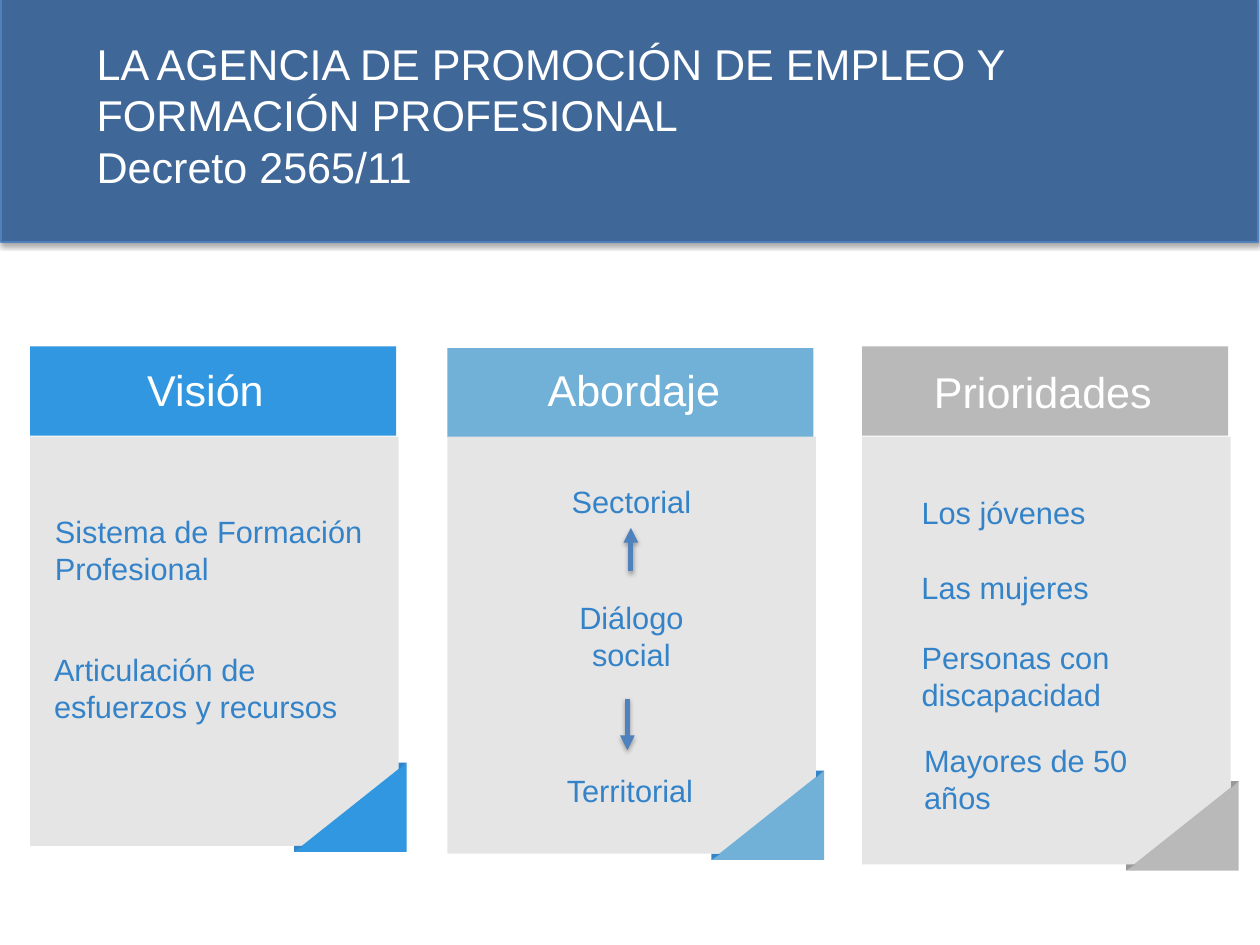
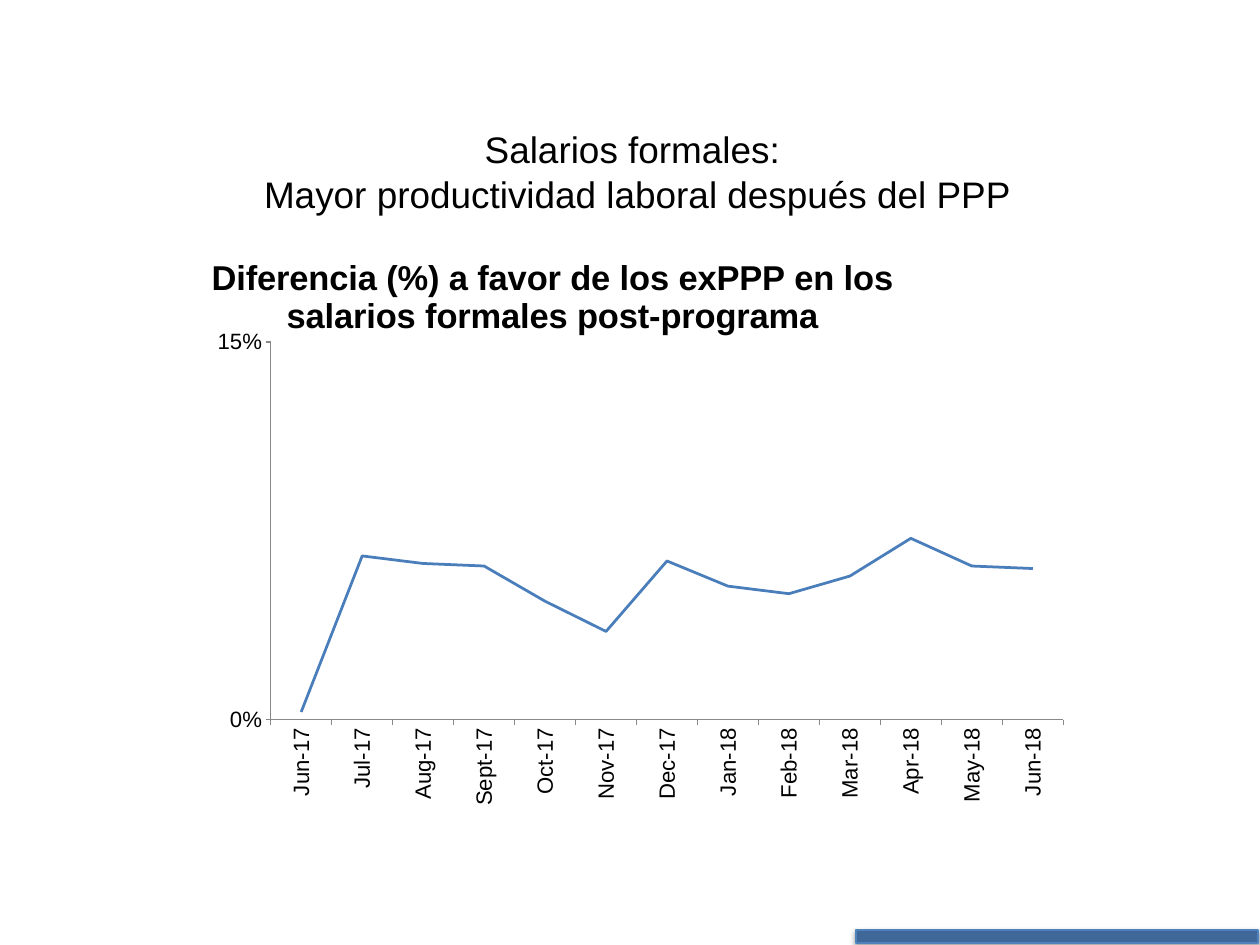
from lxml.etree import SubElement
from pptx import Presentation
from pptx.chart.data import CategoryChartData
from pptx.dml.color import RGBColor
from pptx.enum.chart import XL_CHART_TYPE, XL_TICK_LABEL_POSITION, XL_TICK_MARK
from pptx.enum.shapes import MSO_CONNECTOR, MSO_SHAPE
from pptx.enum.text import MSO_ANCHOR, PP_ALIGN
from pptx.oxml import parse_xml
from pptx.oxml.ns import nsdecls, qn
from pptx.util import Inches, Pt

FONT = "Arial"
WHITE, BLACK, PALE = "FFFFFF", "000000", "E5E5E5"
NAVY, EDGE, INK = "3F6797", "4F81BD", "3483C9"
PLOT, AXIS = "4A7EBB", "888888"


def color(code):
    return RGBColor.from_string(code)


def style(font, size, code, bold=False):
    font.name, font.size, font.bold = FONT, Pt(size), bold
    font.color.rgb = color(code)


def text(slide, words, box, size=25, code=INK, inset=0, center=False, middle=True):
    frame = slide.shapes.add_textbox(*map(Inches, box)).text_frame
    frame.word_wrap = True
    frame.margin_left = frame.margin_right = Inches(inset)
    frame.margin_top = frame.margin_bottom = Inches(inset)
    frame.vertical_anchor = MSO_ANCHOR.MIDDLE if middle else MSO_ANCHOR.TOP
    para = frame.paragraphs[0]
    para.text = words
    para.alignment = PP_ALIGN.CENTER if center else PP_ALIGN.LEFT
    for run in para.runs:
        style(run.font, size, code)


def paint(shape, code):
    shape.shadow.inherit = False
    shape.fill.solid()
    shape.fill.fore_color.rgb = color(code)
    shape.line.fill.background()


def rect(slide, box, code):
    shape = slide.shapes.add_shape(MSO_SHAPE.RECTANGLE, *map(Inches, box))
    paint(shape, code)
    return shape


def shade(shape):
    props = shape._element.spPr
    for old in props.findall(qn("a:effectLst")):
        props.remove(old)
    props.append(parse_xml(
        f'<a:effectLst {nsdecls("a")}><a:outerShdw blurRad="{Pt(4)}" '
        f'dist="{Pt(2)}" dir="5400000" rotWithShape="0"><a:srgbClr val="{BLACK}">'
        '<a:alpha val="35000"/></a:srgbClr></a:outerShdw></a:effectLst>'))


def band(slide, box):
    shape = rect(slide, box, NAVY)
    shape.line.color.rgb = color(EDGE)
    shape.line.width = Pt(2)
    shade(shape)


def arrow(slide, x, start, end):
    line = slide.shapes.add_connector(
        MSO_CONNECTOR.STRAIGHT, *map(Inches, (x, start, x, end)))
    line.line.color.rgb = color(EDGE)
    line.line.width = Pt(4)
    SubElement(line.line._get_or_add_ln(), qn("a:tailEnd"), type="triangle")
    shade(line)


def patch(slide, x, y, points, code):
    spots = [(Inches(x + dx), Inches(y + dy)) for dx, dy in points]
    pen = slide.shapes.build_freeform(*spots[0], scale=1.0)
    pen.add_line_segments(spots[1:], close=True)
    paint(pen.convert_to_shape(), code)


def fold(slide, right, bottom, code, dark):
    x, y = right - 1.18, bottom - 0.94
    for points, fill in (
            ([(1.27, 0), (1.27, 1.01), (0, 1.01)], code),
            ([(0.1, 0.94), (0, 0.94), (0, 1.01)], dark),
            ([(1.18, 0.08), (1.18, 0), (1.27, 0)], dark)):
        patch(slide, x, y, points, fill)


def card(slide, x, y, high, name, code, dark, label, items, center=False):
    rect(slide, (x, y, 4.13, 1.01), code)
    dx, dy, wide = label
    text(slide, name, (x + dx, y + dy, wide, 0.73), 35, WHITE, 0.07, middle=False)
    rect(slide, (x, 4.93, 4.16, high), PALE)
    for words, left, top, width, tall in items:
        text(slide, words, (x + left, y + top, width, tall), center=center)
    fold(slide, x + 4.16, 4.93 + high, code, dark)


def agency(slide):
    band(slide, (0.01, -0.06, 14.19, 2.79))
    text(slide, "LA AGENCIA DE PROMOCIÓN DE EMPLEO Y FORMACIÓN PROFESIONAL\v"
         "Decreto 2565/11", (1.02, 0.35, 12.18, 2.39), 35, WHITE, 0.07, middle=False)
    card(slide, 0.34, 3.91, 4.62, "Visión", "3197E0", "3484C9", (1.25, 0.12, 1.51), [
        ("Sistema de Formación Profesional", 0.28, 1.58, 3.8, 1.43),
        ("Articulación de esfuerzos y recursos", 0.27, 3.14, 3.46, 1.43)])
    card(slide, 5.05, 3.93, 4.71, "Abordaje", "72B1D7", "3484C9", (1.06, 0.1, 2.18), [
        ("Sectorial", 1.32, 1.01, 1.51, 1.43),
        ("Diálogo social", 1.32, 2.53, 1.51, 1.43),
        ("Territorial", 1.11, 4.28, 1.9, 1.43)], center=True)
    arrow(slide, 7.12, 6.45, 5.96)
    arrow(slide, 7.08, 7.89, 8.47)
    card(slide, 9.73, 3.91, 4.83, "Prioridades", "B9B9B9", "999999", (0.74, 0.15, 2.73), [
        ("Los jóvenes", 0.67, 1.58, 2.42, 0.59),
        ("Las mujeres", 0.67, 2.42, 2.73, 0.59),
        ("Personas con discapacidad", 0.67, 3.26, 2.91, 0.91),
        ("Mayores de 50 años", 0.7, 4.43, 2.91, 0.91)])


def layout(parent, index, inner=False, **sides):
    for old in parent.findall(qn("c:layout")):
        parent.remove(old)
    target = '<c:layoutTarget val="inner"/>' if inner else ""
    modes = "".join(f'<c:{key}Mode val="edge"/>' for key in "xy")
    sizes = "".join(f'<c:{key} val="{val}"/>' for key, val in sides.items())
    parent.insert(index, parse_xml(
        f'<c:layout {nsdecls("c")}><c:manualLayout>{target}{modes}{sizes}'
        '</c:manualLayout></c:layout>'))


def trend(slide, box):
    data = CategoryChartData(number_format="0%")
    data.categories = (
        "Jun-17 Jul-17 Aug-17 Sept-17 Oct-17 Nov-17 Dec-17 "
        "Jan-18 Feb-18 Mar-18 Apr-18 May-18 Jun-18").split()
    data.add_series("Series 1", (
        0.003, 0.065, 0.062, 0.061, 0.047, 0.035, 0.063,
        0.053, 0.05, 0.057, 0.072, 0.061, 0.06))
    chart = slide.shapes.add_chart(
        XL_CHART_TYPE.LINE, *map(Inches, box), data).chart
    chart.has_legend = False
    style(chart.font, 18, BLACK)
    chart.has_title = True
    frame = chart.chart_title.text_frame
    frame.text = "Diferencia (%) a favor de los exPPP en los salarios formales post-programa"
    style(frame.paragraphs[0].runs[0].font, 28, BLACK, True)
    chart.chart_title.include_in_layout = True
    layout(chart.chart_title._element, 1, x=0.01, y=0.08)
    layout(chart._chartSpace.chart.plotArea, 0, inner=True,
           x=0.085, y=0.229, w=0.91, h=0.609)
    for axis in (chart.category_axis, chart.value_axis):
        axis.has_major_gridlines = False
        axis.major_tick_mark = XL_TICK_MARK.OUTSIDE
        axis.minor_tick_mark = XL_TICK_MARK.NONE
        axis.format.line.color.rgb = color(AXIS)
        axis.format.line.width = Pt(1)
        style(axis.tick_labels.font, 18, BLACK)
    names, scale = chart.category_axis, chart.value_axis
    names.tick_label_position = XL_TICK_LABEL_POSITION.LOW
    names._element.find(qn("c:txPr")).find(qn("a:bodyPr")).set("rot", "-5400000")
    scale.minimum_scale, scale.maximum_scale, scale.major_unit = 0, 0.15, 0.15
    scale.tick_labels.number_format = "0%"
    scale.tick_labels.number_format_is_linked = False
    plot = chart.plots[0]
    plot.vary_by_categories = False
    line = plot.series[0]
    line.smooth = False
    line.format.line.color.rgb = color(PLOT)
    line.format.line.width = Pt(2.25)


def wages(slide):
    text(slide, "Salarios formales: \vMayor productividad laboral después del PPP",
         (0.2, 1.27, 13.99, 1.33), 30, BLACK, 0.07, center=True)
    trend(slide, (2.22, 2.26, 9.83, 7))
    band(slide, (9.66, 10.5, 4.54, 0.15))


def main():
    deck = Presentation()
    deck.slide_width, deck.slide_height = Inches(14.22), Inches(10.67)
    for build in (agency, wages):
        build(deck.slides.add_slide(deck.slide_layouts[6]))
    deck.save("out.pptx")


if __name__ == "__main__":
    main()
